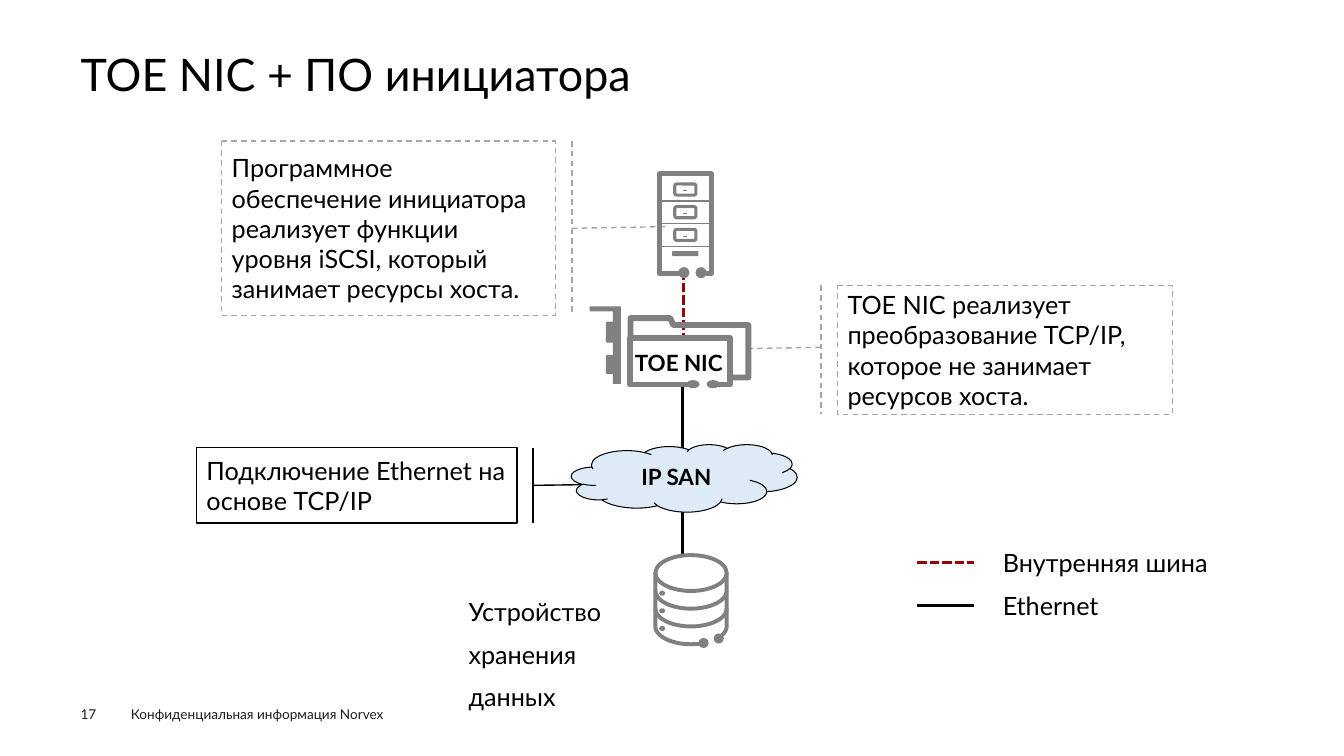
import math

import lxml.etree
import pptx
import pptx.dml.color
import pptx.enum.dml
import pptx.enum.shapes
import pptx.enum.text
import pptx.oxml.ns
import pptx.util

Pt = pptx.util.Pt
KINDS = pptx.enum.shapes.MSO_SHAPE
ANCHORS = pptx.enum.text.MSO_ANCHOR
ALIGNS = pptx.enum.text.PP_ALIGN
DASHES = pptx.enum.dml.MSO_LINE
FONT = "Lato"
BLACK, GRAY, RED = "000000", "808080", "990000"


def color(code):
    return pptx.dml.color.RGBColor.from_string(code)


def set_line(item, code, width, dash=None):
    item.line.color.rgb = color(code)
    item.line.width = Pt(width)
    if dash:
        item.line.dash_style = dash


def paint(shape, fill=None, line=None, width=1, dash=None):
    shape.shadow.inherit = False
    if fill:
        shape.fill.solid()
        shape.fill.fore_color.rgb = color(fill)
    else:
        shape.fill.background()
    if line:
        set_line(shape, line, width, dash)
    else:
        shape.line.fill.background()


def write(shape, text, size=18, code=BLACK, bold=False, align=ALIGNS.LEFT,
          anchor=ANCHORS.TOP, spacing=None, inset=None, wrap=True):
    frame = shape.text_frame
    frame.text = text
    frame.word_wrap = wrap
    frame.auto_size = pptx.enum.text.MSO_AUTO_SIZE.NONE
    frame.vertical_anchor = anchor
    if inset is not None:
        frame.margin_left = frame.margin_right = Pt(inset)
        frame.margin_top = frame.margin_bottom = Pt(inset)
    para = frame.paragraphs[0]
    para.alignment = align
    if spacing:
        para.line_spacing = spacing
    font = para.runs[0].font
    font.name, font.size, font.bold = FONT, Pt(size), bold
    font.color.rgb = color(code)


def add_shape(shapes, kind, left, top, width, height):
    return shapes.add_shape(kind, Pt(left), Pt(top), Pt(width), Pt(height))


def add_text(shapes, left, top, width, height, text, **style):
    box = shapes.add_textbox(Pt(left), Pt(top), Pt(width), Pt(height))
    write(box, text, **style)


def add_line(shapes, x1, y1, x2, y2, code, width, dash=None):
    line = shapes.add_connector(pptx.enum.shapes.MSO_CONNECTOR.STRAIGHT,
                                Pt(x1), Pt(y1), Pt(x2), Pt(y2))
    set_line(line, code, width, dash)
    lxml.etree.SubElement(line._element.spPr, pptx.oxml.ns.qn("a:effectLst"))


def add_outline(shapes, left, top, points, width=0):
    spots = [(Pt(left + x), Pt(top + y)) for x, y in points]
    builder = shapes.build_freeform(*spots[0])
    builder.add_line_segments(spots[1:], close=not width)
    outline = builder.convert_to_shape()
    if width:
        paint(outline, line=GRAY, width=width)
    else:
        paint(outline, GRAY)


def add_solid(shapes, kind, left, top, width, height):
    paint(add_shape(shapes, kind, left, top, width, height), GRAY)


def draw_title(page, left, top, width, height):
    title = page.shapes.title
    title.left, title.top = Pt(left), Pt(top)
    title.width, title.height = Pt(width), Pt(height)
    write(title, "TOE NIC + ПО инициатора", size=32, anchor=ANCHORS.MIDDLE,
          spacing=0.9, inset=0)


def draw_footer(page, left, top):
    style = {"size": 9.7, "code": "1D1D1B"}
    add_text(page.shapes, left, top + 3.6, 40, 12, "17", inset=0, **style)
    add_text(page.shapes, left + 28.8, top, 237, 19,
             "Конфиденциальная информация Norvex", **style)


def draw_callout(page, left, top, width, height, text, pointer, code, dash=None):
    callout = add_shape(page.shapes, KINDS.LINE_CALLOUT_1_BORDER_AND_ACCENT_BAR,
                        left, top, width, height)
    for index, value in enumerate(pointer):
        callout.adjustments[index] = value
    paint(callout, line=code, dash=dash)
    write(callout, text, anchor=ANCHORS.MIDDLE)


def draw_legend(page, left, top):
    entries = [("Внутренняя шина", RED, DASHES.SQUARE_DOT), ("Ethernet", BLACK, None)]
    for index, (text, code, dash) in enumerate(entries):
        row = top + 30.6 * index
        add_line(page.shapes, left, row + 23, left + 40.3, row + 23, code, 2.25, dash)
        add_text(page.shapes, left + 54, row, 183, 35.3, text, spacing=1.4)


def draw_server(page, left, top):
    shapes = page.shapes.add_group_shape().shapes
    add_outline(shapes, left, top, [(30.2, 73), (38.5, 73), (38.5, 1.8), (1.8, 1.8),
                                    (1.8, 73), (17.3, 73)], 3.6)
    for index in range(3):
        row = top + 16.2 * index
        drawer = add_shape(shapes, KINDS.ROUNDED_RECTANGLE, left + 12.6, row + 9, 15.1, 7.9)
        paint(drawer, line=GRAY, width=2.2)
        add_line(shapes, left + 18.7, row + 14, left + 21.6, row + 14, GRAY, 0.75)
        add_line(shapes, left + 2.2, row + 21.2, left + 38.9, row + 21.2, GRAY, 0.75)
    add_solid(shapes, KINDS.ROUNDED_RECTANGLE, left + 10.8, top + 56.9, 18.7, 3.6)
    for x in (15.1, 27.4):
        add_solid(shapes, KINDS.OVAL, left + x, top + 68.4, 7.9, 7.9)


def draw_card(page, left, top):
    shapes = page.shapes.add_group_shape().shapes
    add_outline(shapes, left, top, [(88.6, 55.8), (100.4, 55.8), (100.4, 22.7),
                                    (28.8, 22.7), (28.8, 55.8), (74.2, 55.8)], 4.2)
    add_outline(shapes, left, top, [(102, 50.8), (113.4, 50.8), (113.4, 13.3), (59.8, 13.3),
                                    (57.6, 8.3), (29.2, 8.3), (29.2, 23)], 4.2)
    add_outline(shapes, left, top, [(0, 0), (22.3, 0), (22.3, 55.4), (16.6, 55.4),
                                    (16.6, 3.6), (0, 3.6)])
    for y, height in ((10.8, 15.1), (34.6, 13.7)):
        add_solid(shapes, KINDS.ROUNDED_RECTANGLE, left + 11.5, top + y, 7.9, height)
    for x in (69.1, 83.5):
        add_solid(shapes, KINDS.OVAL, left + x, top + 52.6, 9.4, 5.8)
    add_text(shapes, left + 25.2, top + 26.6, 75.6, 26.6, "TOE NIC", size=16,
             bold=True, wrap=False)


def draw_storage(page, left, top):
    shapes = page.shapes.add_group_shape().shapes

    def arc(level, start, stop):
        angles = [math.radians(start + (stop - start) * step / 20) for step in range(21)]
        return [(27 + 25.5 * math.cos(angle), 14 + 12.7 * level + 12.8 * math.sin(angle))
                for angle in angles]

    lid = add_shape(shapes, KINDS.OVAL, left + 1.5, top + 1.2, 51, 25.6)
    paint(lid, line=GRAY, width=2.8)
    rings = [arc(1, 0, 180), arc(2, 0, 180),
             [(1.5, 14)] + arc(3, 180, 69), [(52.5, 14)] + arc(3, 0, 39)]
    for ring in rings:
        add_outline(shapes, left, top, ring, 2.8)
    for index in range(3):
        add_solid(shapes, KINDS.OVAL, left + 4.3, top + 26.6 + 12.6 * index, 4.2, 3.6)
    for x, y in ((32.4, 60.4), (43.2, 57.2)):
        add_solid(shapes, KINDS.OVAL, left + x, top + y, 7.2, 7.2)


def draw_topology(page, left, top):
    shapes = page.shapes
    add_line(shapes, left + 67, top + 70.6, left + 67, top + 117.4, RED, 2.25,
             DASHES.SQUARE_DOT)
    add_line(shapes, left + 66.2, top + 154, left + 66.2, top + 273, BLACK, 2.25)
    cloud = add_shape(shapes, KINDS.CLOUD, left - 13, top + 195.1, 161.3, 48.2)
    paint(cloud, "DEEBF7", BLACK, 0.75)
    write(cloud, "IP SAN", size=16, bold=True, align=ALIGNS.CENTER, anchor=ANCHORS.MIDDLE)
    draw_server(page, left + 48.2, top)
    draw_card(page, left, top + 96.5)
    draw_storage(page, left + 45.4, top + 272.9)
    add_text(shapes, left - 93.6, top + 291.6, 157, 35.3, "Устройство хранения данных",
             spacing=1.4)


def main():
    deck = pptx.Presentation()
    deck.slide_width, deck.slide_height = Pt(960), Pt(540)
    page = deck.slides.add_slide(deck.slide_layouts[5])
    draw_title(page, 57.6, 35.3, 844.6, 38.9)
    draw_footer(page, 57.6, 500.4)
    draw_callout(page, 158.4, 100.8, 238.3, 124.6,
                 "Программное обеспечение инициатора реализует функции уровня iSCSI, "
                 "который занимает ресурсы хоста.",
                 (0.5, 1.05, 0.49, 1.34), "A6A6A6", DASHES.DASH)
    draw_callout(page, 140.4, 319.7, 229, 54, "Подключение Ethernet на основе TCP/IP",
                 (0.5, 1.05, 0.49, 1.22), BLACK)
    draw_callout(page, 598.3, 203.8, 239, 92.2,
                 "TOE NIC реализует преобразование TCP/IP, которое не занимает ресурсов хоста.",
                 (0.48, -0.05, 0.49, -0.27), "A6A6A6", DASHES.DASH)
    draw_legend(page, 655.2, 378.7)
    draw_topology(page, 421.2, 122.4)
    deck.save("out.pptx")


if __name__ == "__main__":
    main()
